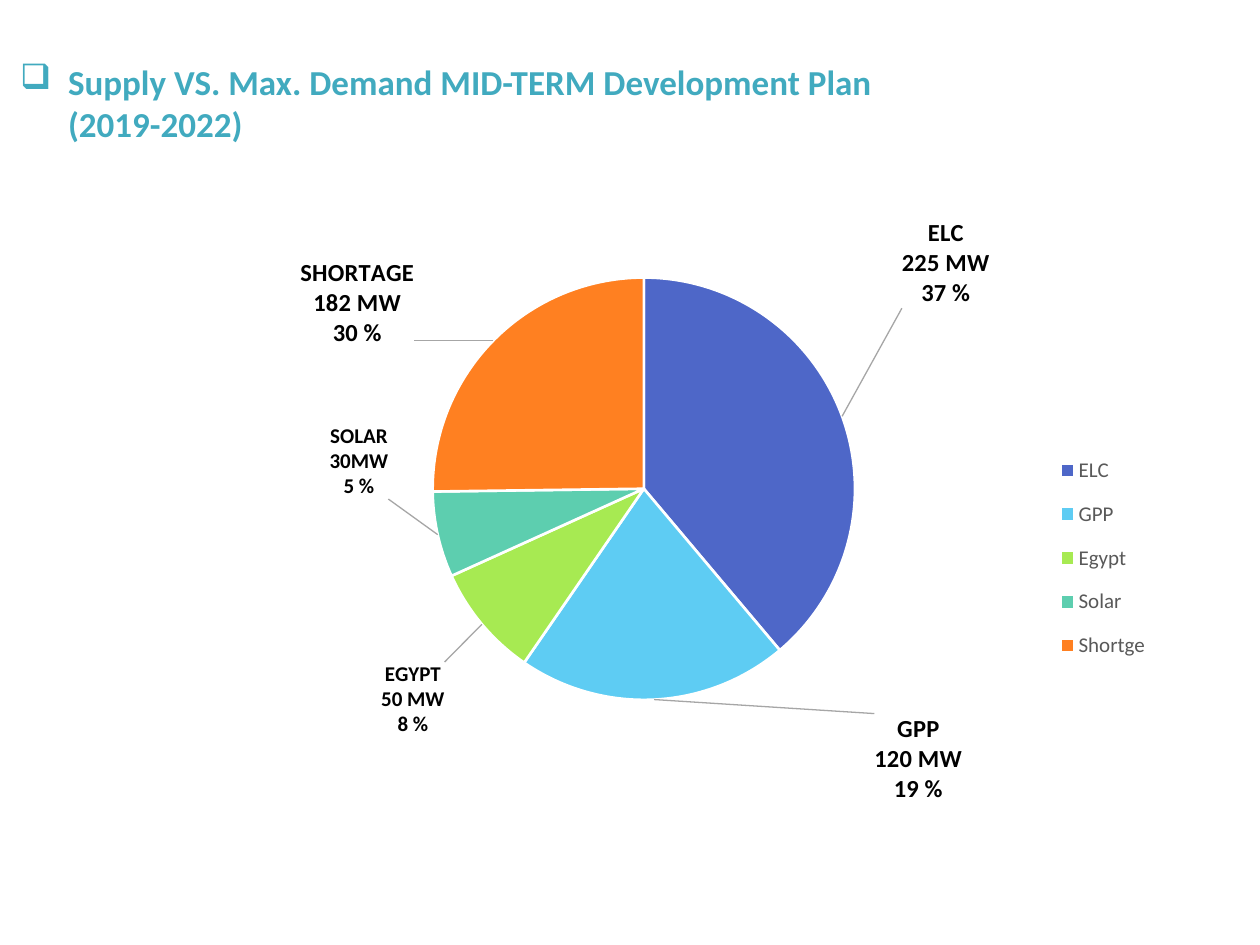
from lxml import etree
from pptx import Presentation
from pptx.chart.data import CategoryChartData
from pptx.dml.color import RGBColor
from pptx.enum.chart import XL_CHART_TYPE, XL_LABEL_POSITION, XL_LEGEND_POSITION
from pptx.enum.text import MSO_ANCHOR, MSO_AUTO_SIZE, PP_ALIGN
from pptx.oxml import parse_xml
from pptx.oxml.ns import nsdecls, qn
from pptx.util import Inches, Pt

PIE = XL_CHART_TYPE.PIE
OUTSIDE_END = XL_LABEL_POSITION.OUTSIDE_END
LEGEND_BOTTOM = XL_LEGEND_POSITION.BOTTOM
TOP = MSO_ANCHOR.TOP
NO_AUTOFIT = MSO_AUTO_SIZE.NONE
LEFT = PP_ALIGN.LEFT

FONT = "Calibri"
COLOURS = {
    "title": "41AABF",
    "label": "000000",
    "legend": "595959",
    "leader": "A6A6A6",
    "border": "FFFFFF",
    "ELC": "4E67C8",
    "GPP": "5ECCF3",
    "Egypt": "A7EA52",
    "Solar": "5DCEAF",
    "Shortge": "FF8021",
}
# category, value, label lines, label size, label shift as shares of the chart
SOURCES = [
    ("ELC", 225, ["ELC", "225 MW", "37 %"], 14, (0.05, -0.16)),
    ("GPP", 120, ["GPP", "120 MW", "19 %"], 14, (0.25, 0.01)),
    ("Egypt", 50, ["EGYPT", "50 MW", "8 %"], 12, (-0.03, 0.05)),
    ("Solar", 38, ["SOLAR", "30MW", "5 %"], 12, (-0.04, -0.17)),
    ("Shortge", 146, ["SHORTAGE", "182 MW", "30 %"], 14, (-0.07, 0.02)),
]


def colour(name):
    return RGBColor.from_string(COLOURS[name])


def format_font(font, size, colour_name, bold=False):
    font.name = FONT
    font.size = Pt(size)
    font.bold = bold
    font.color.rgb = colour(colour_name)


def manual_layout(x, y, width=None, height=None, inner=False):
    """Return a c:layout; without a size, x and y shift from the default place."""
    values = []
    if inner:
        values.append(("layoutTarget", "inner"))
    if width is not None:
        values += [("xMode", "edge"), ("yMode", "edge")]
    values += [("x", x), ("y", y)]
    if width is not None:
        values += [("w", width), ("h", height)]
    layout = parse_xml(f"<c:layout {nsdecls('c')}><c:manualLayout/></c:layout>")
    for tag, value in values:
        etree.SubElement(layout[0], qn(f"c:{tag}")).set("val", str(value))
    return layout


def place(element, layout, after):
    """Put the layout behind the named child, in place of an earlier layout."""
    for old in element.findall(qn("c:layout")):
        element.remove(old)
    if after is None:
        element.insert(0, layout)
    else:
        element.find(qn(after)).addnext(layout)


def add_title(slide, lines):
    title = slide.shapes.title
    title.left, title.top = Inches(0.15), Inches(0.48)
    title.width, title.height = Inches(9.77), Inches(0.69)
    frame = title.text_frame
    frame.margin_left = frame.margin_right = 0
    frame.margin_top = frame.margin_bottom = 0
    frame.vertical_anchor = TOP
    frame.auto_size = NO_AUTOFIT
    frame.word_wrap = True
    paragraph = frame.paragraphs[0]
    paragraph.alignment = LEFT
    for index, line in enumerate(lines):
        if index:
            paragraph.add_line_break()
        run = paragraph.add_run()
        run.text = line
        format_font(run.font, 20, "title", bold=True)
    properties = paragraph._p.get_or_add_pPr()
    properties.set("marL", str(Inches(0.39)))
    properties.set("indent", str(Inches(-0.38)))
    etree.SubElement(properties, qn("a:buChar")).set("char", "❑")


def format_slice(point, name):
    point.format.fill.solid()
    point.format.fill.fore_color.rgb = colour(name)
    point.format.line.color.rgb = colour("border")
    point.format.line.width = Pt(1.5)


def label_slice(point, lines, size, shift):
    label = point.data_label
    frame = label.text_frame
    for index, line in enumerate(lines):
        paragraph = frame.add_paragraph() if index else frame.paragraphs[0]
        run = paragraph.add_run()
        run.text = line
        format_font(run.font, size, "label", bold=True)
    label.position = OUTSIDE_END
    place(label._dLbl, manual_layout(*shift), "c:idx")


def add_leader_lines(labels):
    labels._element.append(parse_xml(
        f"<c:leaderLines {nsdecls('c', 'a')}><c:spPr><a:ln w=\"9525\"><a:solidFill>"
        f"<a:srgbClr val=\"{COLOURS['leader']}\"/>"
        "</a:solidFill></a:ln></c:spPr></c:leaderLines>"))


def add_legend(chart):
    chart.has_legend = True
    legend = chart.legend
    legend.position = LEGEND_BOTTOM
    legend.include_in_layout = False
    format_font(legend.font, 12, "legend")
    place(legend._element, manual_layout(0.88, 0.36, 0.11, 0.36), "c:legendPos")


def add_supply_chart(slide):
    data = CategoryChartData()
    data.categories = [source[0] for source in SOURCES]
    data.add_series("Series 1", [source[1] for source in SOURCES])
    chart = slide.shapes.add_chart(
        PIE, Inches(0.92), Inches(1.6), Inches(8.38), Inches(5.24), data).chart
    chart.has_title = False
    format_font(chart.font, 10, "label")
    plot = chart.plots[0]
    plot.vary_by_categories = True
    series = plot.series[0]
    labels = series.data_labels
    labels.show_value = True
    labels.position = OUTSIDE_END
    format_font(labels.font, 12, "label", bold=True)
    add_leader_lines(labels)
    for index, (name, _, lines, size, shift) in enumerate(SOURCES):
        point = series.points[index]
        format_slice(point, name)
        label_slice(point, lines, size, shift)
    plot_area = chart._chartSpace.chart.plotArea
    place(plot_area, manual_layout(0.3, 0.11, 0.4, 0.65, inner=True), None)
    add_legend(chart)


def main():
    presentation = Presentation()
    presentation.slide_width, presentation.slide_height = Inches(10), Inches(7.5)
    slide = presentation.slides.add_slide(presentation.slide_layouts[5])
    add_title(slide, ["Supply VS. Max. Demand MID-TERM Development Plan", "(2019-2022)"])
    add_supply_chart(slide)
    presentation.save("out.pptx")


if __name__ == "__main__":
    main()
